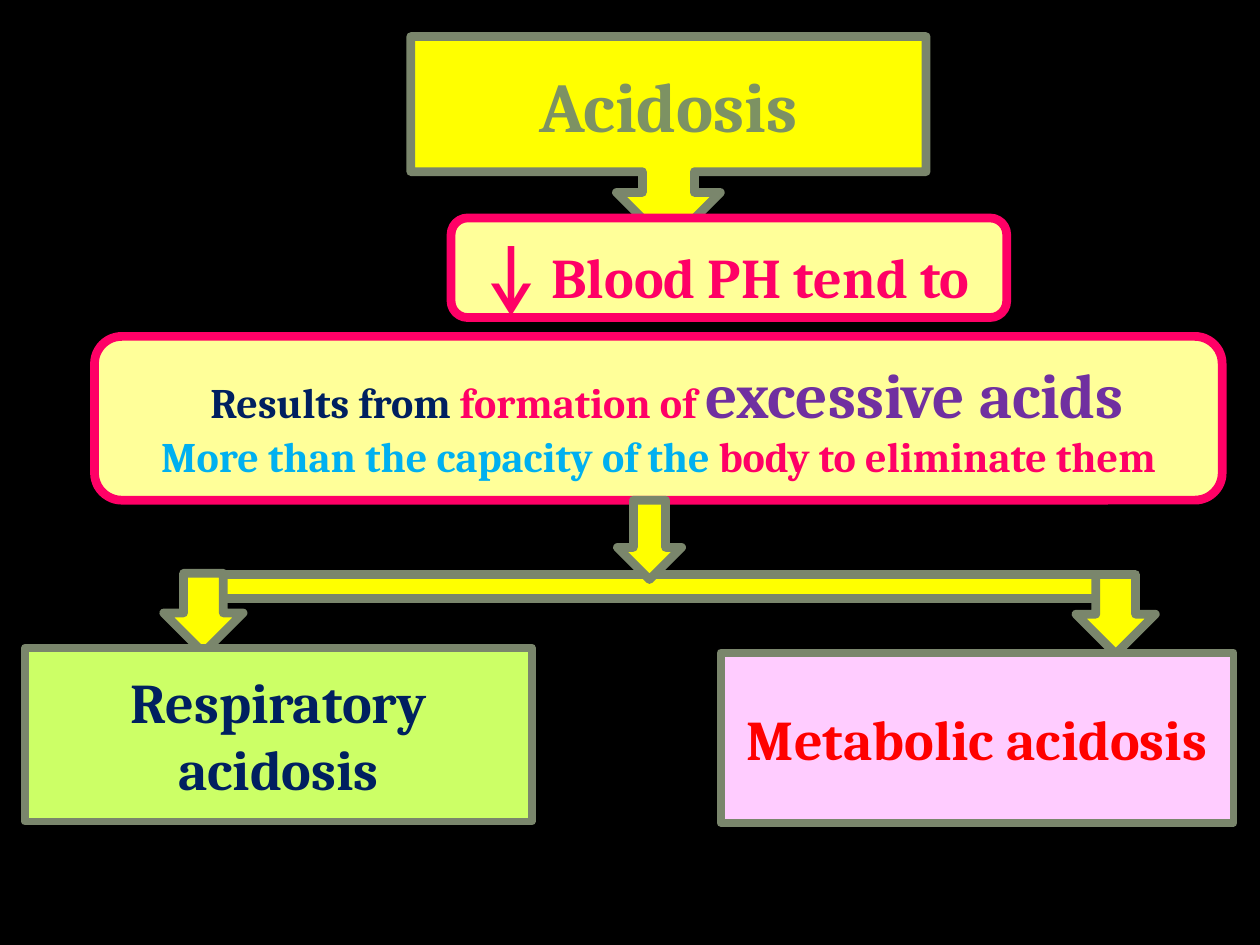
from dataclasses import dataclass

from pptx import Presentation
from pptx.dml.color import RGBColor
from pptx.enum.shapes import MSO_SHAPE
from pptx.enum.text import MSO_ANCHOR, PP_ALIGN
from pptx.util import Inches, Pt

BLACK = RGBColor(0x00, 0x00, 0x00)
YELLOW = RGBColor(0xFF, 0xFF, 0x00)
CREAM = RGBColor(0xFF, 0xFF, 0x99)
LIME = RGBColor(0xCC, 0xFF, 0x66)
PINK = RGBColor(0xFF, 0xCC, 0xFF)
OLIVE = RGBColor(0x7A, 0x86, 0x6C)
SAGE = RGBColor(0x7D, 0x92, 0x63)
ROSE = RGBColor(0xFF, 0x00, 0x66)
NAVY = RGBColor(0x00, 0x20, 0x60)
RED = RGBColor(0xFF, 0x00, 0x00)
PURPLE = RGBColor(0x70, 0x30, 0xA0)
SKY = RGBColor(0x00, 0xB0, 0xF0)

FONT = "Cambria"
COLS, ROWS = 100, 75
CALLOUT_BODY = 0.65


@dataclass(frozen=True)
class Area:
    col: float
    row: float
    cols: float
    rows: float


@dataclass(frozen=True)
class Run:
    text: str
    size: int
    color: RGBColor


@dataclass(frozen=True)
class Block:
    kind: MSO_SHAPE
    area: Area
    fill: RGBColor = YELLOW
    line: RGBColor = OLIVE
    weight: float = 5
    lines: tuple[tuple[Run, ...], ...] = ()


TITLE = Block(MSO_SHAPE.DOWN_ARROW_CALLOUT, Area(32.6, 2.9, 40.9, 16.5))
TITLE_LINES = ((Run("Acidosis", 40, SAGE),),)

BLOCKS = (
    Block(MSO_SHAPE.RECTANGLE, Area(14.6, 45.6, 74, 1.9)),
    Block(MSO_SHAPE.DOWN_ARROW, Area(13, 45.5, 6.3, 6.3)),
    Block(MSO_SHAPE.DOWN_ARROW, Area(85.4, 45.6, 6.3, 6.3)),
    Block(MSO_SHAPE.RECTANGLE, Area(2, 51.4, 40.2, 13.8), LIME, weight=4.5,
          lines=((Run("Respiratory acidosis", 32, NAVY),),)),
    Block(MSO_SHAPE.RECTANGLE, Area(57.2, 51.8, 40.7, 13.5), PINK, weight=4.5,
          lines=((Run("Metabolic acidosis", 32, RED),),)),
    Block(MSO_SHAPE.ROUNDED_RECTANGLE, Area(35.8, 17.3, 44.1, 7.9), CREAM, ROSE,
          lines=((Run("Blood PH tend to ", 32, ROSE), Run("↓", 44, ROSE)),)),
    Block(MSO_SHAPE.ROUNDED_RECTANGLE, Area(7.5, 26.7, 89.5, 13), CREAM, ROSE,
          lines=((Run("Results from ", 24, NAVY),
                  Run("formation of ", 24, ROSE),
                  Run("excessive acids ", 36, PURPLE)),
                 (Run("More than the capacity of the ", 24, SKY),
                  Run("body to eliminate them", 24, ROSE)))),
    Block(MSO_SHAPE.DOWN_ARROW, Area(49, 39.7, 5.1, 6.3)),
)


def box(prs, area: Area) -> tuple[int, int, int, int]:
    w, h = prs.slide_width / COLS, prs.slide_height / ROWS
    return (round(area.col * w), round(area.row * h),
            round(area.cols * w), round(area.rows * h))


def write(tf, lines: tuple[tuple[Run, ...], ...]) -> None:
    tf.word_wrap = True
    tf.vertical_anchor = MSO_ANCHOR.MIDDLE
    for i, runs in enumerate(lines):
        p = tf.add_paragraph() if i else tf.paragraphs[0]
        p.alignment = PP_ALIGN.CENTER
        p._p.get_or_add_pPr().set("rtl", "1")
        for run in runs:
            r = p.add_run()
            r.text = run.text
            r.font.name = FONT
            r.font.size = Pt(run.size)
            r.font.bold = True
            r.font.color.rgb = run.color


def draw(prs, s, block: Block):
    sp = s.shapes.add_shape(block.kind, *box(prs, block.area))
    sp.shadow.inherit = False
    sp.fill.solid()
    sp.fill.fore_color.rgb = block.fill
    sp.line.color.rgb = block.line
    sp.line.width = Pt(block.weight)
    write(sp.text_frame, block.lines)
    return sp


def draw_title(prs, s) -> None:
    callout = draw(prs, s, TITLE)
    title = s.shapes.title
    title._element.addprevious(callout._element)
    a = TITLE.area
    body = Area(a.col, a.row, a.cols, a.rows * CALLOUT_BODY)
    title.left, title.top, title.width, title.height = box(prs, body)
    write(title.text_frame, TITLE_LINES)


def main() -> None:
    prs = Presentation()
    prs.slide_width, prs.slide_height = Inches(10), Inches(7.5)
    s = prs.slides.add_slide(prs.slide_layouts[5])
    s.background.fill.solid()
    s.background.fill.fore_color.rgb = BLACK
    draw_title(prs, s)
    for block in BLOCKS:
        draw(prs, s, block)
    prs.save("out.pptx")


if __name__ == "__main__":
    main()
